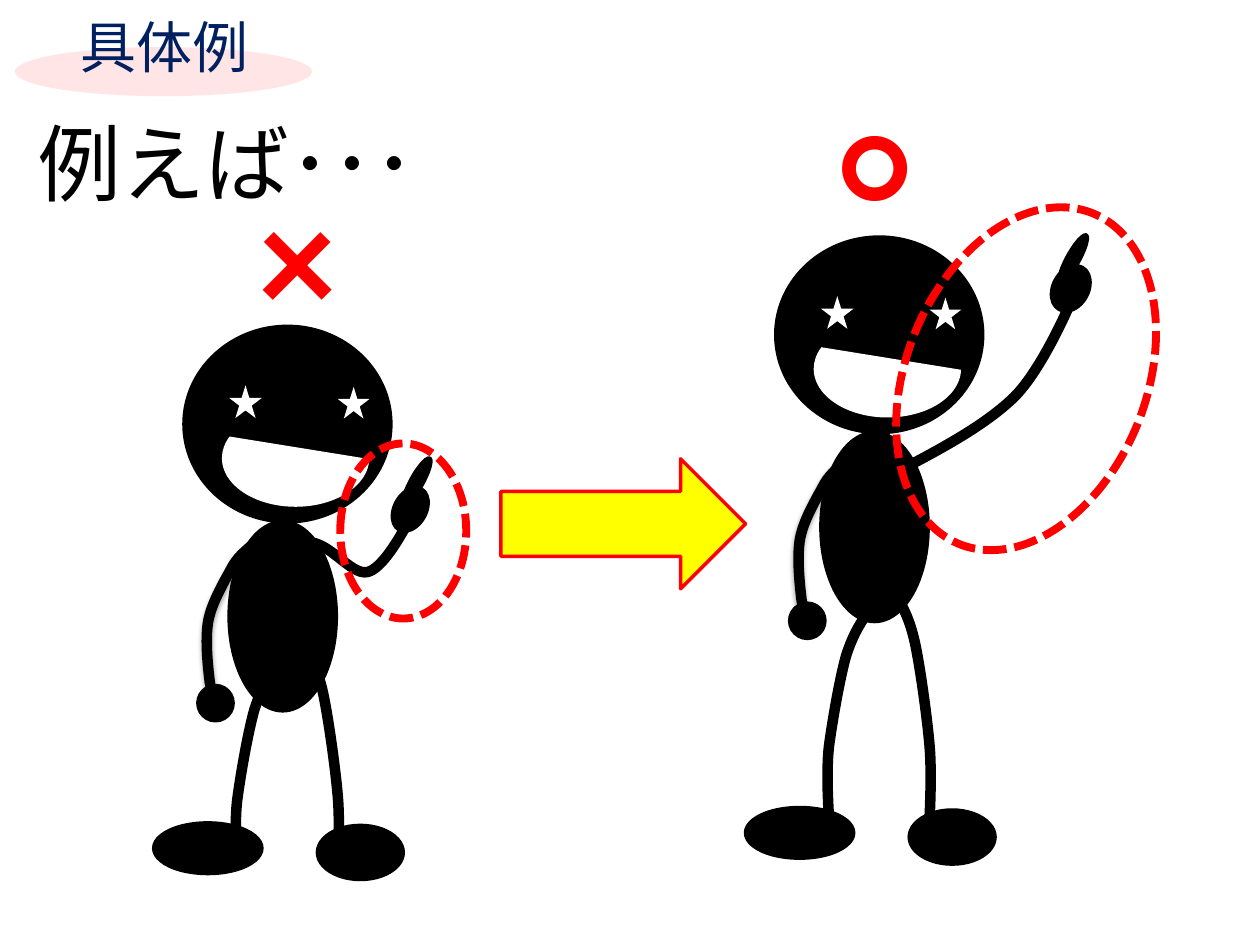
"""Build the slide that contrasts a timid and a fully raised pointing arm."""
import lxml.etree
import pptx
import pptx.dml.color
import pptx.enum.dml
import pptx.enum.shapes
import pptx.enum.text
import pptx.oxml
import pptx.oxml.ns
import pptx.util

Cm, Pt = pptx.util.Cm, pptx.util.Pt
RGB = pptx.dml.color.RGBColor
MSO = pptx.enum.shapes.MSO_SHAPE
qn = pptx.oxml.ns.qn
BLACK = RGB(0x00, 0x00, 0x00)
WHITE = RGB(0xFF, 0xFF, 0xFF)
RED = RGB(0xFF, 0x00, 0x00)
YELLOW = RGB(0xFF, 0xFF, 0x00)
PINK = RGB(0xFF, 0xE5, 0xE5)
NAVY = RGB(0x00, 0x20, 0x60)
SHADOW = (
    '<a:outerShdw %s blurRad="39370" dist="20320" dir="5400000" rotWithShape="0">'
    '<a:srgbClr val="000000"><a:alpha val="38000"/></a:srgbClr></a:outerShdw>'
    % pptx.oxml.ns.nsdecls("a")
)

LEFT_ARM = [(5.13, 10.95), (4.7, 11.3), (4.72, 11.38), (4.57, 11.63),
            (4.42, 11.91), (4.24, 12.24), (4.19, 12.57),
            (4.14, 12.93), (4.19, 13.41), (4.22, 13.67),
            (4.24, 13.92), (4.34, 14.1), (4.34, 14.1)]
LEFT_LEG = [(5.59, 13.39), (5.44, 13.62), (5.28, 13.84), (5.13, 14.3),
            (5, 14.76), (4.85, 15.62), (4.78, 16.15),
            (4.72, 16.69), (4.78, 17.53), (4.78, 17.53)]
RIGHT_LEG = [(6.17, 13.08), (6.3, 13.31), (6.43, 13.56), (6.53, 14.05),
             (6.63, 14.55), (6.76, 15.47), (6.81, 16.05),
             (6.86, 16.61), (6.81, 17.53), (6.81, 17.53)]
LOW_ARM = [(6.1, 10.95), (6.58, 10.8), (7.06, 11.63), (7.42, 11.53),
           (7.8, 11.43), (8.31, 10.36), (8.31, 10.36)]
HIGH_ARM = [(18.26, 9.42), (19.08, 8.99), (19.91, 8.53), (20.45, 8),
            (21.01, 7.44), (21.56, 6.15), (21.56, 6.15)]

FIGURES = [
    dict(dx=0, head=0, arm=0, left_leg=0, right_leg=0, feet=0,
         pointing=LOW_ARM, palm=(7.95, 9.8, 0.64, 0.94),
         finger=(8.28, 9.17, 0.25, 1.07), ring=(6.86, 8.94, 2.54, 3.53), tilt=0),
    dict(dx=11.93, head=-1.8, arm=-1.66, left_leg=-1.09, right_leg=-1.02, feet=-0.31,
         pointing=HIGH_ARM, palm=(21.23, 5.33, 0.71, 0.97),
         finger=(21.51, 4.67, 0.25, 1.09), ring=(18.26, 4.04, 4.85, 7.19), tilt=21.9),
]


def add_shape(shapes, kind, box, fill=None, line=None, width=2, dx=0, dy=0):
    x, y, w, h = box
    sp = shapes.add_shape(kind, Cm(x + dx), Cm(y + dy), Cm(w), Cm(h))
    sp.shadow.inherit = False
    if fill is None:
        sp.fill.background()
    else:
        sp.fill.solid()
        sp.fill.fore_color.rgb = fill
    if line is None:
        sp.line.fill.background()
    else:
        sp.line.color.rgb = line
        sp.line.width = Pt(width)
    return sp


def add_limb(shapes, points, dx=0, dy=0):
    pts = [(Cm(x + dx), Cm(y + dy)) for x, y in points]
    fb = shapes.build_freeform(*pts[0])
    fb.add_line_segments(pts[1:], close=False)
    sp = fb.convert_to_shape()
    outline = next(sp.element.iter(qn("a:path")))
    segments = outline.findall(qn("a:lnTo"))
    for i in range(0, len(segments), 3):
        curve = lxml.etree.SubElement(outline, qn("a:cubicBezTo"))
        for segment in segments[i:i + 3]:
            curve.append(segment[0])
            outline.remove(segment)
    sp.shadow.inherit = False
    sp.fill.background()
    sp.line.color.rgb = BLACK
    sp.line.width = Pt(6)
    return sp


prs = pptx.Presentation()
prs.slide_width, prs.slide_height = Cm(25.4), Cm(19.05)
s = prs.slides.add_slide(prs.slide_layouts[5])

for text, box, size, color, bold, wrap in [
    ("例えば･･･", (0.5, 2.13, 22.86, 3.2), 48, BLACK, False, True),
    ("×", (4.17, 3.12, 3.68, 4.01), 88, RED, True, False),
    ("○", (16.1, 1.52, 3.1, 3.33), 72, RED, True, False),
]:
    tf = s.shapes.add_textbox(*map(Cm, box)).text_frame
    tf.word_wrap = wrap
    p = tf.paragraphs[0]
    p.text = text
    p.font.name, p.font.size, p.font.bold = "Calibri", Pt(size), bold
    p.font.color.rgb = color
    if not wrap:
        p.alignment = pptx.enum.text.PP_ALIGN.CENTER

for f in FIGURES:
    shapes = s.shapes.add_group_shape().shapes
    dx = f["dx"]
    for box in [(3.71, 6.58, 4.17, 3.94), (4.62, 10.52, 2.16, 3.81)]:
        add_shape(shapes, MSO.OVAL, box, BLACK, BLACK, dx=dx, dy=f["head"])
    mouth = add_shape(shapes, MSO.CHORD, (4.98, 7.75, 1.96, 2.97), WHITE,
                      dx=dx, dy=f["head"])
    mouth.rotation = 270
    mouth.adjustments[0], mouth.adjustments[1] = 54.42, 172.89

    add_limb(shapes, f["pointing"])
    for part in ("palm", "finger"):
        add_shape(shapes, MSO.OVAL, f[part], BLACK, BLACK).rotation = 29

    arm = add_limb(shapes, LEFT_ARM, dx, f["arm"])
    effects = arm.element.spPr.find(qn("a:effectLst"))
    effects.append(pptx.oxml.parse_xml(SHADOW))
    add_limb(shapes, LEFT_LEG, dx, f["left_leg"])
    add_limb(shapes, RIGHT_LEG, dx, f["right_leg"])
    for box, part in [((3.1, 16.59, 2.18, 1.02), "feet"),
                      ((6.4, 16.64, 1.73, 1.09), "feet"),
                      ((3.99, 13.82, 0.71, 0.71), "arm")]:
        add_shape(shapes, MSO.OVAL, box, BLACK, BLACK, dx=dx, dy=f[part])
    for box in [(4.62, 7.77, 0.66, 0.66), (6.81, 7.8, 0.64, 0.64)]:
        add_shape(shapes, MSO.STAR_5_POINT, box, WHITE, dx=dx, dy=f["head"])

    ring = add_shape(shapes, MSO.OVAL, f["ring"], line=RED, width=4.5)
    ring.rotation = f["tilt"]
    ring.line.dash_style = pptx.enum.dml.MSO_LINE.SQUARE_DOT

add_shape(s.shapes, MSO.RIGHT_ARROW, (10.1, 9.25, 4.93, 2.62), YELLOW, RED)
add_shape(s.shapes, MSO.OVAL, (0.3, 0.95, 5.99, 0.99), PINK)

title = s.shapes.title
title.left, title.top, title.width, title.height = map(Cm, (0.68, 0.13, 5.03, 1.47))
tf = title.text_frame
tf.text = " 具体例"
tf.auto_size = pptx.enum.text.MSO_AUTO_SIZE.NONE
tf.vertical_anchor = pptx.enum.text.MSO_ANCHOR.TOP
p = tf.paragraphs[0]
p.alignment = pptx.enum.text.PP_ALIGN.CENTER
p.font.name, p.font.size = "Calibri", Pt(32)
p.font.color.rgb = NAVY
title.element.getparent().append(title.element)

prs.save("out.pptx")
